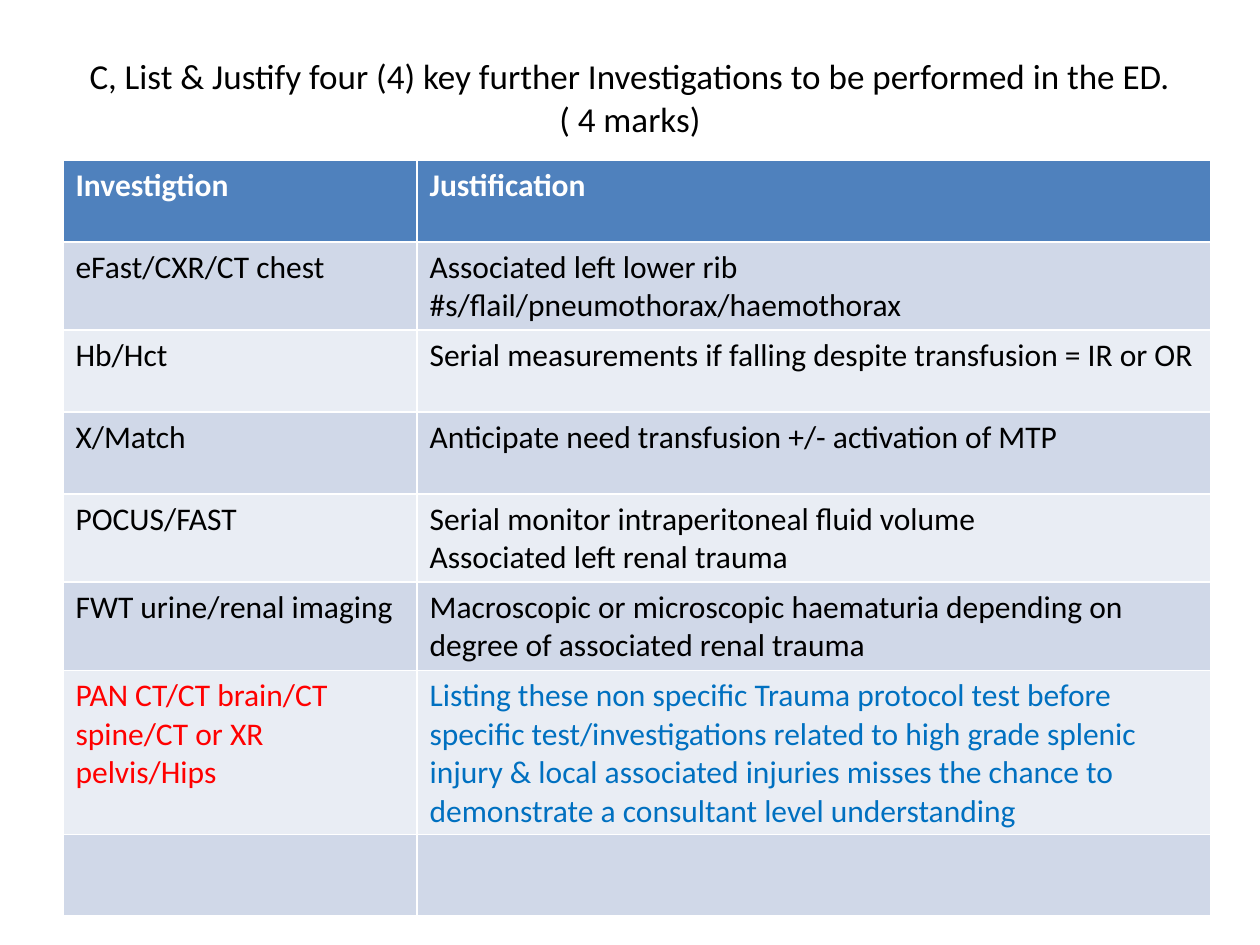
from dataclasses import dataclass

from pptx import Presentation
from pptx.dml.color import RGBColor
from pptx.enum.text import MSO_ANCHOR, PP_ALIGN
from pptx.util import Inches, Pt


@dataclass(frozen=True)
class Theme:
    font: str = "Calibri"
    title_size: int = 20
    table_size: int = 18
    black: str = "000000"
    white: str = "FFFFFF"
    red: str = "FF0000"
    blue: str = "0070C0"
    header: str = "4F81BD"
    bands: tuple[str, str] = ("D0D8E8", "E9EDF4")


THEME = Theme()


@dataclass(frozen=True)
class Row:
    investigation: str = ""
    justification: str = ""
    colors: tuple[str, str] = (THEME.black, THEME.black)
    height: float = 0.65


TITLE = ("C, List & Justify four (4) key further Investigations "
         "to be performed in the ED. ( 4 marks)")
COLUMN_WIDTHS = (2.81, 6.3)
ROWS = (
    Row("Investigtion", "Justification", (THEME.white, THEME.white)),
    Row("eFast/CXR/CT chest",
        "Associated left lower rib #s/flail/pneumothorax/haemothorax"),
    Row("Hb/Hct", "Serial measurements if falling despite transfusion = IR or OR"),
    Row("X/Match", "Anticipate need transfusion +/- activation of MTP"),
    Row("POCUS/FAST",
        "Serial monitor intraperitoneal fluid volume\nAssociated left renal trauma"),
    Row("FWT urine/renal imaging",
        "Macroscopic or microscopic haematuria depending on degree of "
        "associated renal trauma"),
    Row("PAN CT/CT brain/CT spine/CT or XR pelvis/Hips",
        "Listing these non specific Trauma protocol test before specific "
        "test/investigations related to high grade splenic injury & local "
        "associated injuries misses the chance to demonstrate a consultant "
        "level understanding",
        (THEME.red, THEME.blue), height=0.7),
    Row(),
)


def write(frame, text: str, size: int, color: str, bold: bool = False) -> None:
    frame.text = text
    for para in frame.paragraphs:
        para.font.name = THEME.font
        para.font.size = Pt(size)
        para.font.bold = bold
        para.font.color.rgb = RGBColor.from_string(color)


def add_title(page) -> None:
    box = page.shapes.add_textbox(Inches(0.5), Inches(0.3), Inches(9), Inches(1.25))
    frame = box.text_frame
    frame.word_wrap = True
    frame.vertical_anchor = MSO_ANCHOR.MIDDLE
    frame.margin_bottom = Inches(0.36)  # lifts the text clear of the table
    write(frame, TITLE, THEME.title_size, THEME.black)
    frame.paragraphs[0].alignment = PP_ALIGN.CENTER


def add_investigation_table(page) -> None:
    # The default table style supplies the white cell borders
    table = page.shapes.add_table(
        len(ROWS), len(COLUMN_WIDTHS), Inches(0.5), Inches(1.27),
        Inches(sum(COLUMN_WIDTHS)), Inches(sum(row.height for row in ROWS))).table
    for column, width in zip(table.columns, COLUMN_WIDTHS):
        column.width = Inches(width)

    for index, row in enumerate(ROWS):
        table.rows[index].height = Inches(row.height)
        is_header = index == 0
        fill = THEME.header if is_header else THEME.bands[(index - 1) % 2]
        texts = (row.investigation, row.justification)
        for cell, text, color in zip(table.rows[index].cells, texts, row.colors):
            cell.fill.solid()
            cell.fill.fore_color.rgb = RGBColor.from_string(fill)
            write(cell.text_frame, text, THEME.table_size, color, is_header)


def main() -> None:
    deck = Presentation()
    deck.slide_width, deck.slide_height = Inches(10), Inches(7.5)
    page = deck.slides.add_slide(deck.slide_layouts[6])
    add_title(page)
    add_investigation_table(page)
    deck.save("out.pptx")


if __name__ == "__main__":
    main()
